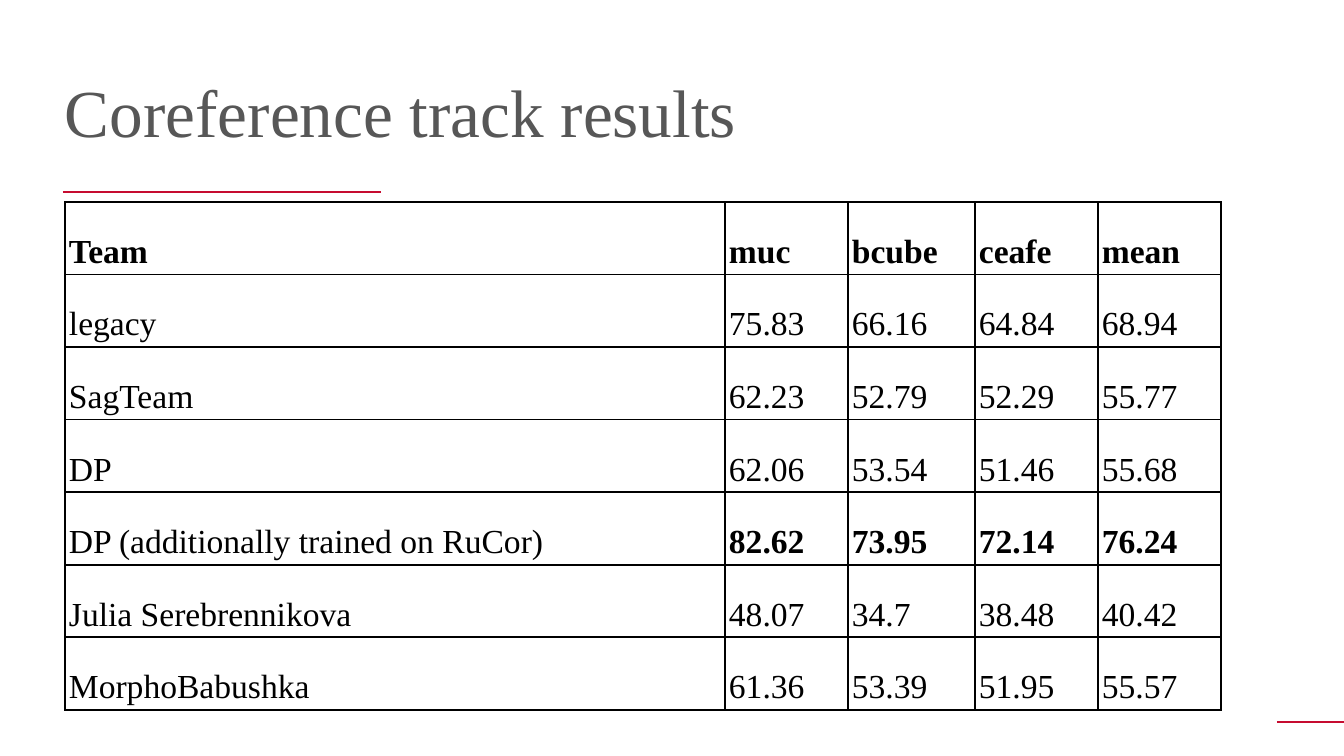
from lxml.etree import SubElement
from pptx import Presentation
from pptx.dml.color import RGBColor
from pptx.enum.shapes import MSO_CONNECTOR
from pptx.enum.text import MSO_ANCHOR, PP_ALIGN
from pptx.oxml.ns import qn
from pptx.util import Pt

SCALE = 914400 / 134.4
FONT = "Times New Roman"
RED, GREY, BLACK = "C60C30", "575757", "000000"

HEAD = ["Team", "muc", "bcube", "ceafe", "mean"]
SCORES = [
    ["legacy", "75.83", "66.16", "64.84", "68.94"],
    ["SagTeam", "62.23", "52.79", "52.29", "55.77"],
    ["DP", "62.06", "53.54", "51.46", "55.68"],
    ["DP (additionally trained on RuCor)", "82.62", "73.95", "72.14", "76.24"],
    ["Julia Serebrennikova", "48.07", "34.7", "38.48", "40.42"],
    ["MorphoBabushka", "61.36", "53.39", "51.95", "55.57"],
]
BEST = 4


def px(n):
    """Turn px into EMU."""
    return round(n * SCALE)


def color(code):
    """Turn a hex string into a colour."""
    return RGBColor.from_string(code)


class Deck:
    """Hold the style and the current slide."""

    def __init__(self, width, height):
        """Start a deck with one title-only slide."""
        self.prs = Presentation()
        self.prs.slide_width, self.prs.slide_height = px(width), px(height)
        self.slide = self.prs.slides.add_slide(self.prs.slide_layouts[5])

    def style(self, para, size, code, bold=False):
        """Format the runs of a paragraph."""
        para.alignment = PP_ALIGN.LEFT
        for run in para.runs:
            font = run.font
            font.name, font.size, font.bold = FONT, Pt(size), bold
            font.color.rgb = color(code)

    def title(self, text, left, top, width, height):
        """Place and format the title."""
        box = self.slide.shapes.title
        box.left, box.top = px(left), px(top)
        box.width, box.height = px(width), px(height)
        frame = box.text_frame
        frame.text = text
        frame.word_wrap = True
        frame.vertical_anchor = MSO_ANCHOR.MIDDLE
        frame.margin_left = frame.margin_right = 0
        frame.margin_top = frame.margin_bottom = px(5)
        self.style(frame.paragraphs[0], 36, GREY)

    def rule(self, start, end, top):
        """Draw a level red line."""
        line = self.slide.shapes.add_connector(
            MSO_CONNECTOR.STRAIGHT, px(start), px(top), px(end), px(top))
        line.line.color.rgb = color(RED)
        line.line.width = Pt(1.5)
        SubElement(line._element.spPr, qn("a:effectLst"))

    def cell(self, cell, text, bold):
        """Fill one table cell and draw its borders."""
        cell.text_frame.text = text
        cell.vertical_anchor = MSO_ANCHOR.BOTTOM
        cell.margin_left = cell.margin_right = px(4)
        cell.margin_top = cell.margin_bottom = px(4)
        self.style(cell.text_frame.paragraphs[0], 18, BLACK, bold)
        props = cell._tc.get_or_add_tcPr()
        for side in "LRTB":
            edge = SubElement(props, qn(f"a:ln{side}"), w=str(Pt(1)))
            fill = SubElement(edge, qn("a:solidFill"))
            SubElement(fill, qn("a:srgbClr"), val=BLACK)
        cell.fill.background()

    def table(self, rows, left, top, widths, height, best):
        """Draw a grid with a bold head and bold best scores."""
        grid = self.slide.shapes.add_table(
            len(rows), len(widths), px(left), px(top),
            px(sum(widths)), px(height)).table
        grid.first_row = grid.horz_banding = False
        for col, width in zip(grid.columns, widths):
            col.width = px(width)
        for r, row in enumerate(rows):
            for c, text in enumerate(row):
                bold = r == 0 or (r == best and c > 0)
                self.cell(grid.cell(r, c), text, bold)


def main():
    """Build the slide."""
    deck = Deck(1344, 756)
    deck.rule(1277, 1344, 722)
    deck.rule(63, 381, 192)
    deck.title("Coreference track results", 65, 31, 1111, 159)
    deck.table([HEAD] + SCORES, 65, 202, [660, 123, 127, 123, 123], 508, BEST)
    deck.prs.save("out.pptx")


if __name__ == "__main__":
    main()
